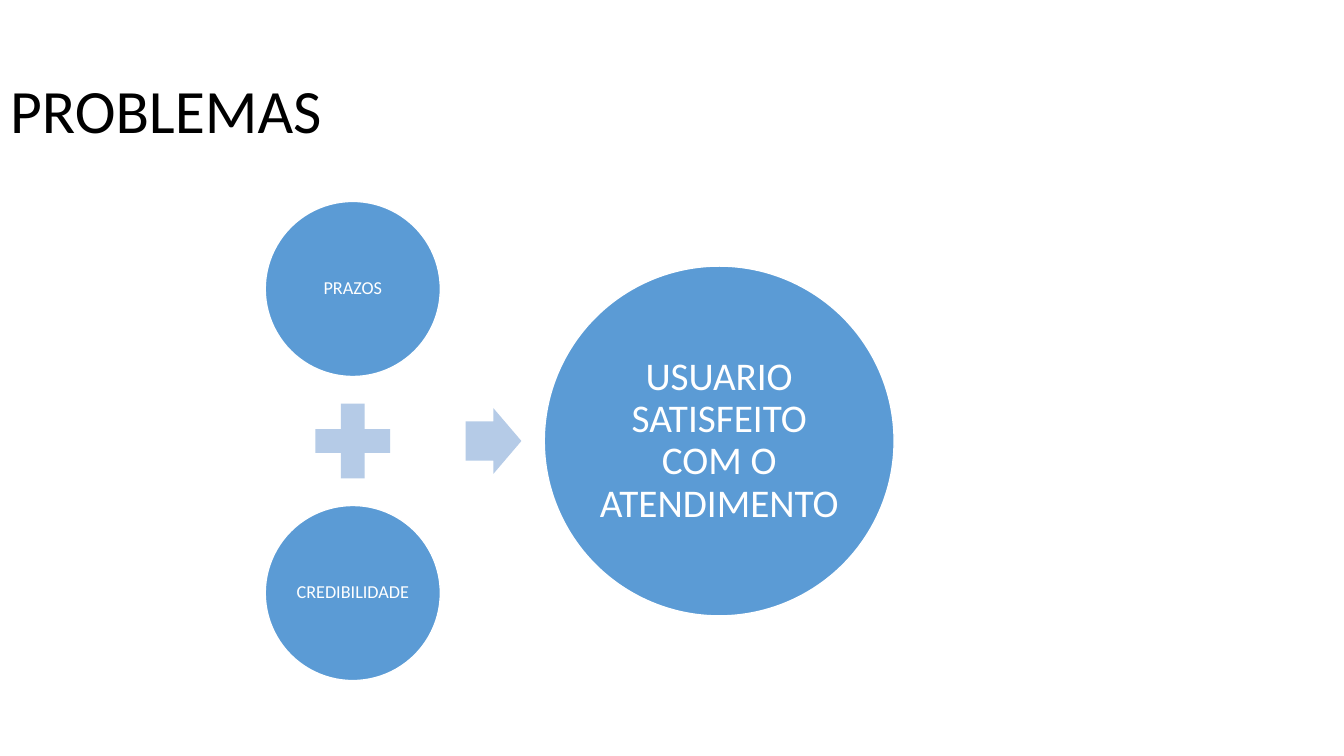
from dataclasses import dataclass

from pptx import Presentation
from pptx import util as u
from pptx.dml.color import RGBColor
from pptx.enum import shapes, text

COLS, ROWS = 160, 90
WIDTH, HEIGHT = u.Inches(13.333), u.Inches(7.5)
BLUE, PALE, WHITE, BLACK = "5B9BD5", "B5CBE7", "FFFFFF", "000000"
MID_ROW = 52.5
INPUT_COL, INPUT_SIZE, INPUT_STEP = 42, 20.85, 18.1
KIND = shapes.MSO_SHAPE


@dataclass
class Circle:
    label: str
    col: float
    row: float
    size: float
    points: int
    inset: float


@dataclass
class Sign:
    kind: KIND
    col: float
    cols: float
    rows: float
    adjustments: tuple[float, ...] = ()


CIRCLES = [
    Circle("PRAZOS", INPUT_COL, MID_ROW - INPUT_STEP, INPUT_SIZE, 13, 0.02),
    Circle("CREDIBILIDADE", INPUT_COL, MID_ROW + INPUT_STEP, INPUT_SIZE, 13, 0.02),
    Circle("USUARIO SATISFEITO COM O ATENDIMENTO", 85.62, MID_ROW, 41.65, 28, 0.04),
]
SIGNS = [
    Sign(KIND.MATH_PLUS, INPUT_COL, 12.1, 12.1),
    Sign(KIND.RIGHT_ARROW, 58.75, 6.65, 7.8, (0.6, 0.5)),
]


def color(value: str) -> RGBColor:
    return RGBColor.from_string(value)


def x(cols: float) -> int:
    return round(WIDTH * cols / COLS)


def y(rows: float) -> int:
    return round(HEIGHT * rows / ROWS)


def write(sp, label: str, points: int, ink: str, align, inset: dict) -> None:
    tf = sp.text_frame
    frame = {"word_wrap": True, "auto_size": text.MSO_AUTO_SIZE.NONE,
             "vertical_anchor": text.MSO_ANCHOR.MIDDLE, **inset}
    for name, value in frame.items():
        setattr(tf, name, value)
    p = tf.paragraphs[0]
    p.alignment, p.line_spacing = align, 0.9
    r = p.add_run()
    r.text = label
    for name, value in {"name": "Calibri", "size": u.Pt(points)}.items():
        setattr(r.font, name, value)
    r.font.color.rgb = color(ink)


def add_centred(s, kind, col: float, row: float, cols: float, rows: float, fill: str):
    """Add a filled shape centred on a grid point."""
    sp = s.shapes.add_shape(kind, x(col - cols / 2), y(row - rows / 2), x(cols), y(rows))
    sp.shadow.inherit = False
    sp.fill.solid()
    sp.fill.fore_color.rgb = color(fill)
    sp.line.fill.background()
    return sp


def draw_circle(s, c: Circle) -> None:
    sp = add_centred(s, KIND.OVAL, c.col, c.row, c.size, c.size, BLUE)
    sp.line.color.rgb = color(WHITE)
    sp.line.width = u.Pt(1)
    inset = {f"margin_{side}": u.Inches(c.inset)
             for side in ("left", "top", "right", "bottom")}
    write(sp, c.label, c.points, WHITE, text.PP_ALIGN.CENTER, inset)


def draw_sign(s, sign: Sign) -> None:
    sp = add_centred(s, sign.kind, sign.col, MID_ROW, sign.cols, sign.rows, PALE)
    for i, value in enumerate(sign.adjustments):
        sp.adjustments[i] = value


def draw_title(s) -> None:
    title = s.shapes.title
    place = {"left": x(0), "top": y(4.8), "width": x(138), "height": y(17.4)}
    for name, value in place.items():
        setattr(title, name, value)
    write(title, "PROBLEMAS", 44, BLACK, text.PP_ALIGN.LEFT, {})


def main() -> None:
    prs = Presentation()
    prs.slide_width, prs.slide_height = WIDTH, HEIGHT
    s = prs.slides.add_slide(prs.slide_layouts[5])
    draw_title(s)
    for circle in CIRCLES:
        draw_circle(s, circle)
    for sign in SIGNS:
        draw_sign(s, sign)
    prs.save("out.pptx")


if __name__ == "__main__":
    main()
